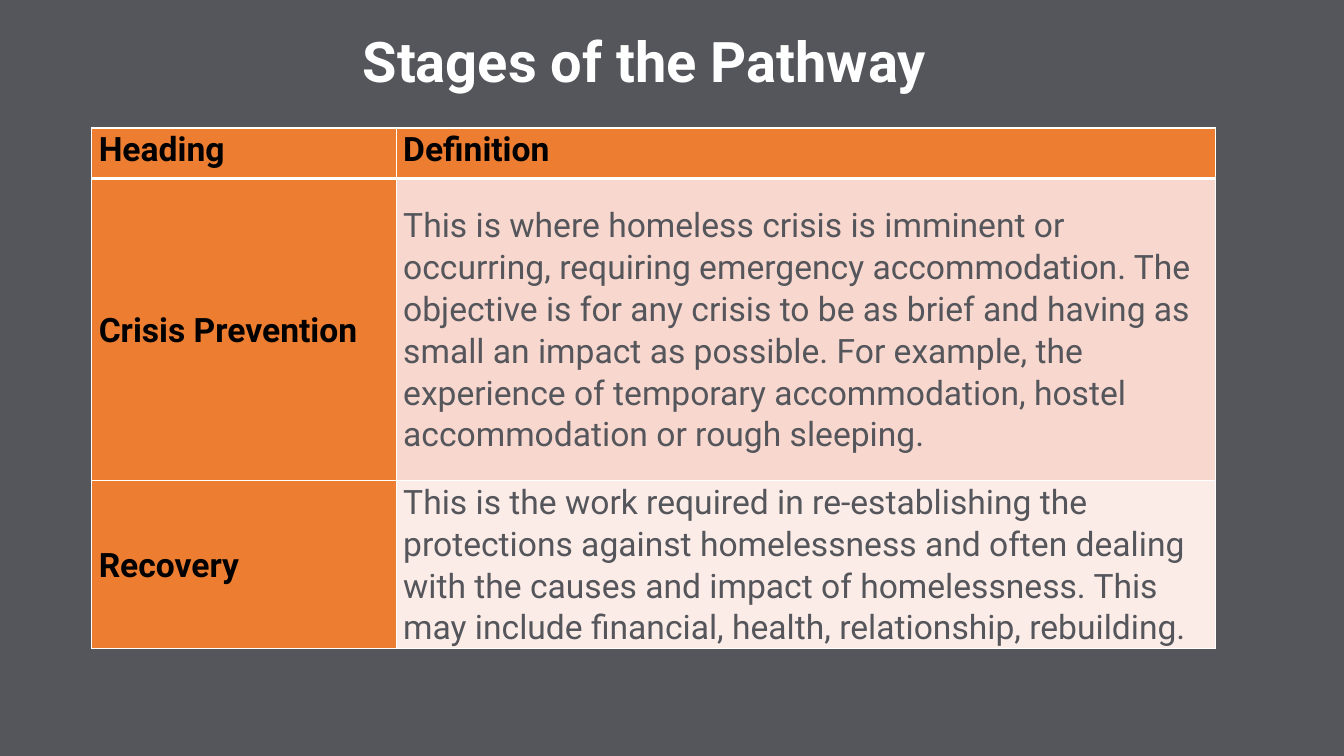
import pptx
import pptx.dml.color
import pptx.enum.text
import pptx.oxml
import pptx.oxml.ns
import pptx.util
from pptx.dml.color import RGBColor
from pptx.util import Inches

FONT = "Roboto"
GREY = RGBColor(0x54, 0x56, 0x5B)
WHITE = RGBColor(0xFF, 0xFF, 0xFF)
BLACK = RGBColor(0x00, 0x00, 0x00)
ORANGE = RGBColor(0xED, 0x7D, 0x31)
BANDS = [RGBColor(0xF8, 0xD7, 0xCE), RGBColor(0xFC, 0xEC, 0xE8)]

COLUMN_WIDTHS = [3.02, 8.13]
ROW_HEIGHTS = [0.5, 3, 1.5]
STAGES = [
    ("Heading", "Definition"),
    ("Crisis Prevention",
     "This is where homeless crisis is imminent or occurring, requiring "
     "emergency accommodation. The objective is for any crisis to be as brief "
     "and having as small an impact as possible. For example, the experience "
     "of temporary accommodation, hostel accommodation or rough sleeping."),
    ("Recovery",
     "This is the work required in re-establishing the protections against "
     "homelessness and often dealing with the causes and impact of "
     "homelessness. This may include financial, health, relationship, "
     "rebuilding."),
]


def add_span(para, text, size, color, bold):
    span = para.add_run()
    span.text = text
    span.font.name = FONT
    span.font.size = pptx.util.Pt(size)
    span.font.color.rgb = color
    span.font.bold = bold


def add_title(page, text):
    title = page.shapes.title
    title.left, title.top = Inches(1.54), Inches(0.07)
    title.width, title.height = Inches(9.7), Inches(0.92)
    title.text_frame.vertical_anchor = pptx.enum.text.MSO_ANCHOR.BOTTOM
    para = title.text_frame.paragraphs[0]
    para.alignment = pptx.enum.text.PP_ALIGN.CENTER
    para.line_spacing = 0.9
    add_span(para, text, 40, WHITE, True)


def set_borders(cell, top, bottom):
    """Draw white borders, with top and bottom widths in points."""
    properties = cell._tc.get_or_add_tcPr()
    widths = {"L": 1, "R": 1, "T": top, "B": bottom}
    for index, (side, width) in enumerate(widths.items()):
        line = pptx.oxml.parse_xml(
            f'<a:ln{side} {pptx.oxml.ns.nsdecls("a")} w="{pptx.util.Pt(width)}">'
            f'<a:solidFill><a:srgbClr val="{WHITE}"/></a:solidFill></a:ln{side}>')
        properties.insert(index, line)


def fill_cell(cell, text, fill, color, bold):
    cell.fill.solid()
    cell.fill.fore_color.rgb = fill
    cell.margin_left = cell.margin_right = Inches(0.07)
    cell.margin_top = cell.margin_bottom = 0
    para = cell.text_frame.paragraphs[0]
    para.line_spacing = 1.06
    add_span(para, text, 24, color, bold)


def add_stage_table(page):
    table = page.shapes.add_table(
        len(STAGES), len(COLUMN_WIDTHS), Inches(0.91), Inches(1.27),
        Inches(sum(COLUMN_WIDTHS)), Inches(sum(ROW_HEIGHTS))).table
    table.first_col = True
    for column, width in zip(table.columns, COLUMN_WIDTHS):
        column.width = Inches(width)
    for row, height in enumerate(ROW_HEIGHTS):
        table.rows[row].height = Inches(height)
        for column, text in enumerate(STAGES[row]):
            cell = table.cell(row, column)
            if row == 0 or column == 0:
                fill_cell(cell, text, ORANGE, BLACK, True)
            else:
                fill_cell(cell, text, BANDS[row - 1], GREY, False)
            if row > 0:
                cell.vertical_anchor = pptx.enum.text.MSO_ANCHOR.MIDDLE
            set_borders(cell, top=3 if row == 1 else 1, bottom=3 if row == 0 else 1)


def main():
    deck = pptx.Presentation()
    deck.slide_width, deck.slide_height = Inches(13.33), Inches(7.5)
    title_only = deck.slide_layouts[5]
    page = deck.slides.add_slide(title_only)
    page.background.fill.solid()
    page.background.fill.fore_color.rgb = GREY
    add_stage_table(page)
    add_title(page, "Stages of the Pathway")
    deck.save("out.pptx")


if __name__ == "__main__":
    main()
